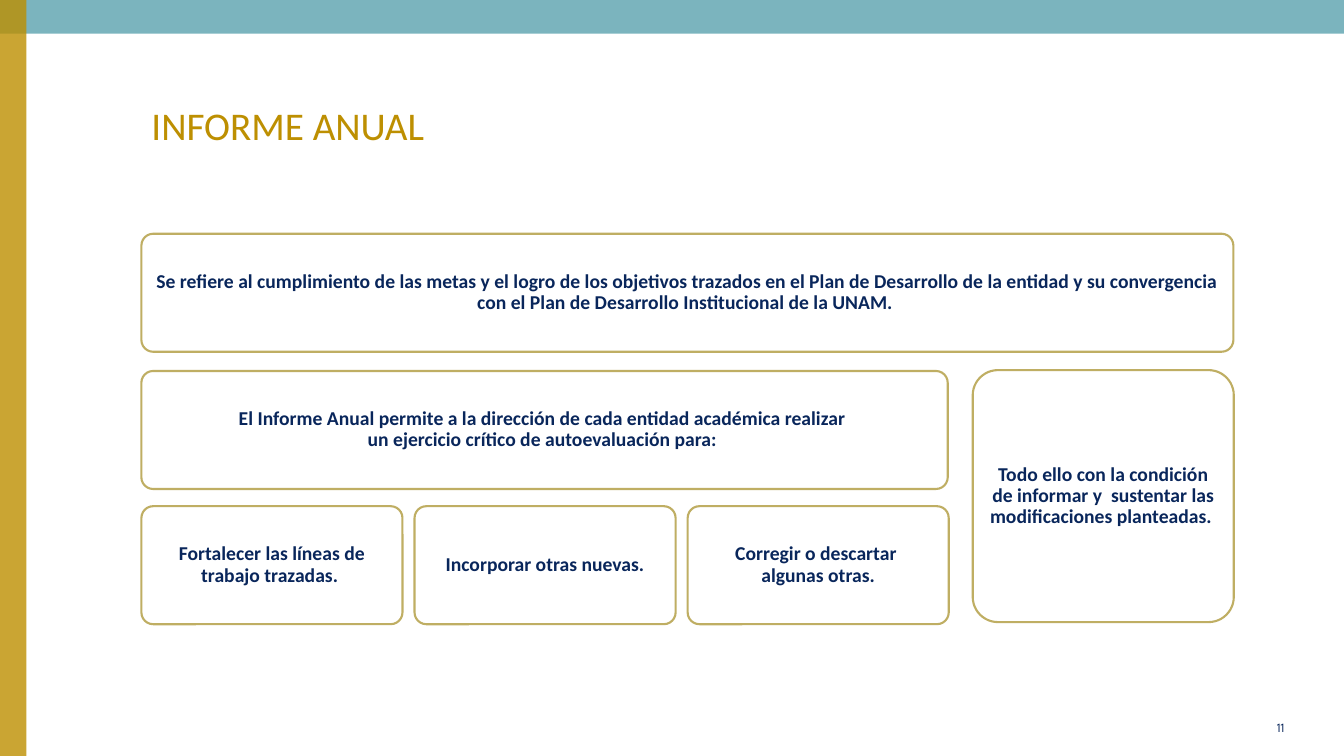
import pptx
import pptx.dml.color
import pptx.enum.shapes
import pptx.enum.text
import pptx.oxml
import pptx.oxml.ns
import pptx.util

Pt = pptx.util.Pt
Align = pptx.enum.text.PP_ALIGN
Shape = pptx.enum.shapes.MSO_SHAPE
MIDDLE = pptx.enum.text.MSO_ANCHOR.MIDDLE

GOLD = "BD8F01"
TEAL = "5AA2AE"
SAND = "BFAE63"
NAVY = "09265B"

LEFT = 101
CARD_WIDTH = 186.5
CARD_HEIGHT = 84.3
CARD_STEP = 195.1


def color(value):
    return pptx.dml.color.RGBColor.from_string(value)


def place(shape, left, top, width, height):
    shape.left, shape.top = Pt(left), Pt(top)
    shape.width, shape.height = Pt(width), Pt(height)


def set_text(shape, text, size, value, align, name="Calibri", bold=False):
    frame = shape.text_frame
    frame.word_wrap = True
    frame.vertical_anchor = MIDDLE
    frame.text = text
    para = frame.paragraphs[0]
    para.alignment = align
    para.font.size = Pt(size)
    para.font.name = name
    para.font.bold = bold
    para.font.color.rgb = color(value)
    return frame


def add_bar(slide, width, height, value):
    bar = slide.shapes.add_shape(Shape.RECTANGLE, 0, 0, Pt(width), Pt(height))
    bar.shadow.inherit = False
    bar.fill.solid()
    bar.fill.fore_color.rgb = color(value)
    bar.line.fill.background()
    tint = bar.fill._xPr.find(".//" + pptx.oxml.ns.qn("a:srgbClr"))
    alpha = pptx.oxml.parse_xml(
        "<a:alpha %s val='80000'/>" % pptx.oxml.ns.nsdecls("a"))
    tint.append(alpha)


def add_card(slide, left, top, width, height, text):
    card = slide.shapes.add_shape(
        Shape.ROUNDED_RECTANGLE, Pt(left), Pt(top), Pt(width), Pt(height))
    card.adjustments[0] = 0.1
    card.shadow.inherit = False
    card.fill.background()
    card.line.color.rgb = color(SAND)
    card.line.width = Pt(1.5)
    frame = set_text(card, text, 14, NAVY, Align.CENTER, bold=True)
    frame.paragraphs[0].line_spacing = 0.9
    frame.margin_left = frame.margin_right = Pt(4.2)
    frame.margin_top = frame.margin_bottom = Pt(4.2)


def add_title(slide, text):
    title = slide.shapes.title
    place(title, LEFT, 48, 780, 82)
    set_text(title, text, 28, GOLD, Align.LEFT)


def add_page_number(slide, text):
    box = slide.shapes.add_textbox(Pt(881), Pt(505), Pt(43.5), Pt(29))
    set_text(box, text, 9, NAVY, Align.RIGHT, name="League Spartan")


def main():
    deck = pptx.Presentation()
    deck.slide_width, deck.slide_height = Pt(960), Pt(540)
    slide = deck.slides.add_slide(deck.slide_layouts[5])

    add_bar(slide, 960, 24, TEAL)
    add_bar(slide, 18.9, 540, GOLD)
    add_title(slide, "INFORME ANUAL")

    add_card(slide, LEFT, 167, 780, CARD_HEIGHT,
             "Se refiere al cumplimiento de las metas y el logro de los "
             "objetivos trazados en el Plan de Desarrollo de la entidad y su "
             "convergencia con el Plan de Desarrollo Institucional de la UNAM. ")
    add_card(slide, LEFT, 265, 576, CARD_HEIGHT,
             "El Informe Anual permite a la dirección de cada entidad "
             "académica realizar \vun ejercicio crítico de autoevaluación para: ")
    purposes = [
        "Fortalecer las líneas de trabajo trazadas. ",
        "Incorporar otras nuevas.",
        "Corregir o descartar \valgunas otras.",
    ]
    for column, purpose in enumerate(purposes):
        add_card(slide, LEFT + column * CARD_STEP, 361.6,
                 CARD_WIDTH, CARD_HEIGHT, purpose)
    add_card(slide, 694.8, 264.4, CARD_WIDTH, 180,
             "Todo ello con la condición de informar y  sustentar las "
             "modificaciones planteadas. ")

    add_page_number(slide, "11")
    deck.save("out.pptx")


if __name__ == "__main__":
    main()
